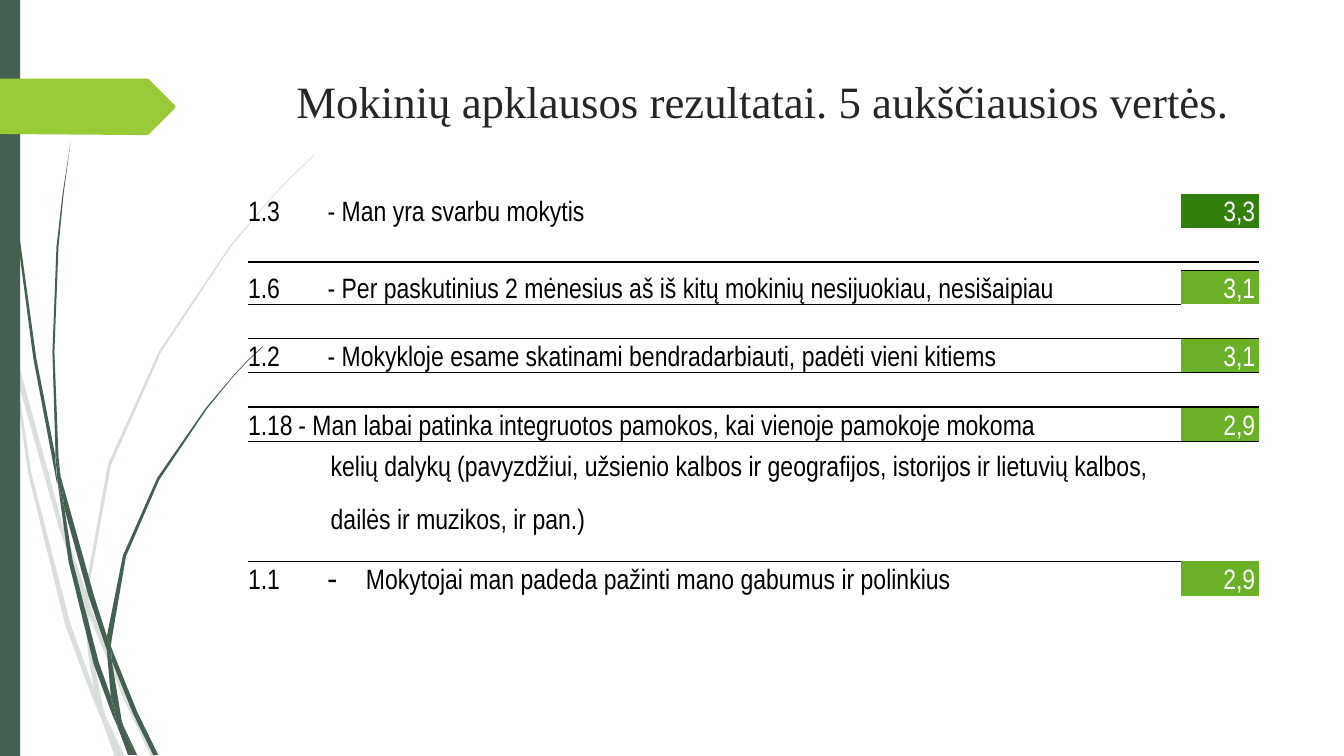
from lxml import etree
from pptx import Presentation
from pptx import util as u
from pptx.dml.color import RGBColor
from pptx.enum import shapes, text
from pptx.oxml import ns

PX = 9144  # one px is a hundredth of an inch
WHITE = RGBColor(0xFF, 0xFF, 0xFF)
BLACK = RGBColor(0x00, 0x00, 0x00)
TITLE_GREY = RGBColor(0x26, 0x26, 0x26)
PINE = RGBColor(0x45, 0x5F, 0x51)
LIME = RGBColor(0x99, 0xCB, 0x38)
DARK_GREEN = RGBColor(0x31, 0x7F, 0x0D)
GREEN = RGBColor(0x6A, 0xB1, 0x27)
NO_STYLE = "{2D5ABB26-0587-4C30-8999-92F81FD0307C}"

# Blades of grass, as outlines in px
PALE_GRASS = [
    [(11, 350), (9, 322), (0, 282), (0, 299), (10, 344)],
    [(58, 522), (84, 599), (85, 586), (62, 520), (14, 345), (17, 376)],
    [(92, 607), (88, 596), (88, 610), (123, 694), (150, 751), (155, 751), (127, 692)],
    [(119, 751), (124, 751), (105, 711)],
    [(93, 683), (70, 619), (31, 469), (17, 376), (11, 350), (28, 470), (65, 621),
     (92, 693), (101, 714), (99, 707)],
    [(84, 599), (87, 646), (93, 683), (96, 692), (105, 711), (103, 706), (91, 646),
     (88, 610), (88, 608)],
    [(88, 584), (110, 462), (160, 349), (229, 245), (268, 198), (290, 175), (312, 154),
     (312, 153), (289, 175), (268, 197), (228, 244), (158, 348), (107, 461), (85, 584),
     (85, 586), (88, 596)],
    [(101, 714), (114, 751), (119, 751)],
    [(88, 608), (88, 610), (88, 596), (85, 586), (84, 599)],
    [(96, 692), (93, 683), (99, 707), (101, 714), (119, 751), (105, 711)],
]
DARK_GRASS = [
    [(7, 110), (17, 233), (33, 355), (56, 477), (57, 481), (55, 457), (55, 453), (36, 355),
     (19, 232), (8, 109), (5, 48), (4, 0), (3, 0), (4, 48)],
    [(88, 592), (106, 645), (106, 633), (106, 631), (93, 590), (60, 472), (64, 505)],
    [(113, 649), (110, 641), (111, 656), (132, 708), (152, 749), (157, 749), (136, 706)],
    [(110, 691), (98, 657), (72, 556), (64, 505), (57, 477), (68, 557), (93, 659),
     (111, 708), (117, 722), (116, 717)],
    [(60, 472), (58, 453), (54, 349), (58, 245), (63, 193), (70, 141), (62, 193),
     (56, 245), (52, 349), (55, 449)],
    [(133, 749), (136, 749), (122, 719)],
    [(57, 477), (64, 505), (60, 472), (55, 449), (55, 453)],
    [(111, 633), (125, 552), (158, 476), (205, 406), (231, 374), (245, 359), (261, 344),
     (260, 344), (245, 358), (231, 373), (204, 405), (156, 474), (122, 551), (106, 631),
     (110, 641)],
    [(117, 722), (127, 749), (131, 749)],
    [(106, 645), (110, 691), (116, 706), (122, 719), (121, 716), (111, 656), (109, 651)],
    [(106, 645), (109, 651), (111, 656), (110, 641), (106, 631), (106, 633)],
    [(116, 706), (110, 691), (116, 717), (117, 722), (130, 749), (133, 749), (122, 719)],
]
TAG = [(173, 108), (148, 133), (146, 134), (136, 134), (0, 133), (0, 78), (146, 78),
       (148, 79), (173, 104), (174, 106)]

# Table contents: (row, number, statement, value, colour of the value)
RESULTS = [
    (0, "1.3", "- Man yra svarbu mokytis", "3,3", DARK_GREEN),
    (3, "1.6", "- Per paskutinius 2 mėnesius aš iš kitų mokinių nesijuokiau, nesišaipiau",
     "3,1", GREEN),
    (5, "1.2", "- Mokykloje esame skatinami bendradarbiauti, padėti vieni kitiems",
     "3,1", GREEN),
    (7, "1.18", "- Man labai patinka integruotos pamokos, kai vienoje pamokoje mokoma",
     "2,9", GREEN),
    (9, "1.1", "Mokytojai man padeda pažinti mano gabumus ir polinkius", "2,9", GREEN),
]
DETAILS = ["kelių dalykų (pavyzdžiui, užsienio kalbos ir geografijos, istorijos ir lietuvių kalbos,",
           "dailės ir muzikos, ir pan.)"]
COLS = [78, 847, 78, 21]
ROWS = [34, 34, 8, 34, 34, 34, 34, 34, 106, 34]
RULES = {1: 3, 4: 3, 6: 3, 8: 2}  # row above the rule: columns it crosses
INDENT = 82


def px(n):
    return u.Emu(n * PX)


def child(parent, tag, **attrs):
    return etree.SubElement(parent, ns.qn(tag), attrs)


def paint(s, color):
    s.shadow.inherit = False
    s.fill.solid()
    s.fill.fore_color.rgb = color
    s.line.fill.background()


def add_outline(parts, left, top, points, color):
    points = [(left + x, top + y) for x, y in points]
    builder = parts.build_freeform(*points[0], scale=PX)
    builder.add_line_segments(points[1:], close=True)
    s = builder.convert_to_shape()
    paint(s, color)
    return s


def add_decoration(slide, left, top, height):
    # Grass, pale behind dark
    for blades, alpha in ((PALE_GRASS, 20), (DARK_GRASS, 100)):
        group = slide.shapes.add_group_shape()
        for blade in blades:
            s = add_outline(group.shapes, left, top, blade, PINE)
            if alpha < 100:
                fill = s._element.spPr.find(ns.qn("a:solidFill"))
                child(fill[0], "a:alpha", val=str(alpha * 1000))
    # Side strip and tag
    strip = slide.shapes.add_shape(shapes.MSO_SHAPE.RECTANGLE, px(left), px(top), px(20), px(height))
    paint(strip, PINE)
    add_outline(slide.shapes, left, top, TAG, LIME)


def add_run(p, words, font, size, color):
    r = p.add_run()
    r.text = words
    r.font.name, r.font.size = font, u.Pt(size)
    r.font.color.rgb = color


def add_title(slide, left, top, width, height):
    tf = slide.shapes.add_textbox(px(left), px(top), px(width), px(height)).text_frame
    tf.word_wrap = True
    add_run(tf.paragraphs[0], "Mokinių apklausos rezultatai. 5 aukščiausios vertės.",
            "Times New Roman", 32, TITLE_GREY)


def write(p, words, color=BLACK, margin=0, hang=0):
    pPr = p._p.get_or_add_pPr()
    pPr.set("marL", str(margin * PX))
    pPr.set("indent", str(-hang * PX))
    add_run(p, words, "Arial Narrow", 20, color)
    return pPr


def add_rule(cell, side):
    ln = child(cell._tc.get_or_add_tcPr(), side, w="12700")
    child(child(ln, "a:solidFill"), "a:srgbClr", val=str(BLACK))


def add_results(slide, left, top):
    frame = slide.shapes.add_table(len(ROWS), len(COLS), px(left), px(top),
                                   px(sum(COLS)), px(sum(ROWS)))
    table = frame.table
    table.first_row = table.horz_banding = False
    table._tbl.tblPr.find(ns.qn("a:tableStyleId")).text = NO_STYLE
    for col, width in zip(table.columns, COLS):
        col.width = px(width)
    for row, height in zip(table.rows, ROWS):
        row.height = px(height)

    # Merged cells
    for col in (0, 1):
        table.cell(2, col).merge(table.cell(3, col))
    for row in (6, 7, 8):
        table.cell(row, 0).merge(table.cell(row, 1))

    # Rules, fills and insets
    for row in range(len(ROWS)):
        for col in range(len(COLS)):
            cell = table.cell(row, col)
            cell.margin_left = cell.margin_right = cell.margin_top = cell.margin_bottom = 0
            cell.vertical_anchor = text.MSO_ANCHOR.BOTTOM
            if col < RULES.get(row - 1, 0):
                add_rule(cell, "a:lnT")
            if col < RULES.get(row, 0):
                add_rule(cell, "a:lnB")
            cell.fill.background()

    # Numbers, statements and values
    for row, number, statement, value, color in RESULTS:
        first = 2 if row == 3 else row
        number_p = table.cell(first, 0).text_frame.paragraphs[0]
        if row == 7:
            pPr = write(number_p, number + "\t" + statement)
            child(child(pPr, "a:tabLst"), "a:tab", pos=str(INDENT * PX), algn="l")
        else:
            write(number_p, number)
            p = table.cell(first, 1).text_frame.paragraphs[0]
            if row == 9:
                child(write(p, statement, margin=39, hang=38), "a:buChar", char="-")
            else:
                write(p, statement, margin=1)
        cell = table.cell(row, 2)
        cell.fill.solid()
        cell.fill.fore_color.rgb = color
        cell.margin_right = px(4)
        p = cell.text_frame.paragraphs[0]
        write(p, value, WHITE)
        p.alignment = text.PP_ALIGN.RIGHT

    # Rest of statement 1.18
    cell = table.cell(8, 0)
    cell.margin_bottom = px(26)
    write(cell.text_frame.paragraphs[0], DETAILS[0], margin=INDENT)
    p = cell.text_frame.add_paragraph()
    write(p, DETAILS[1], margin=INDENT)
    p.space_before = u.Pt(19)

    # Small type keeps empty cells from stretching their rows
    for cell in table.iter_cells():
        p = cell.text_frame.paragraphs[0]
        if not p.runs:
            child(p._p, "a:endParaRPr", sz="100")


def main():
    prs = Presentation()
    prs.slide_width, prs.slide_height = px(1333), px(750)
    slide = prs.slides.add_slide(prs.slide_layouts[6])
    add_decoration(slide, 0, 0, 750)
    add_title(slide, 284, 68, 975, 140)
    add_results(slide, 246, 192)
    prs.save("out.pptx")


if __name__ == "__main__":
    main()
